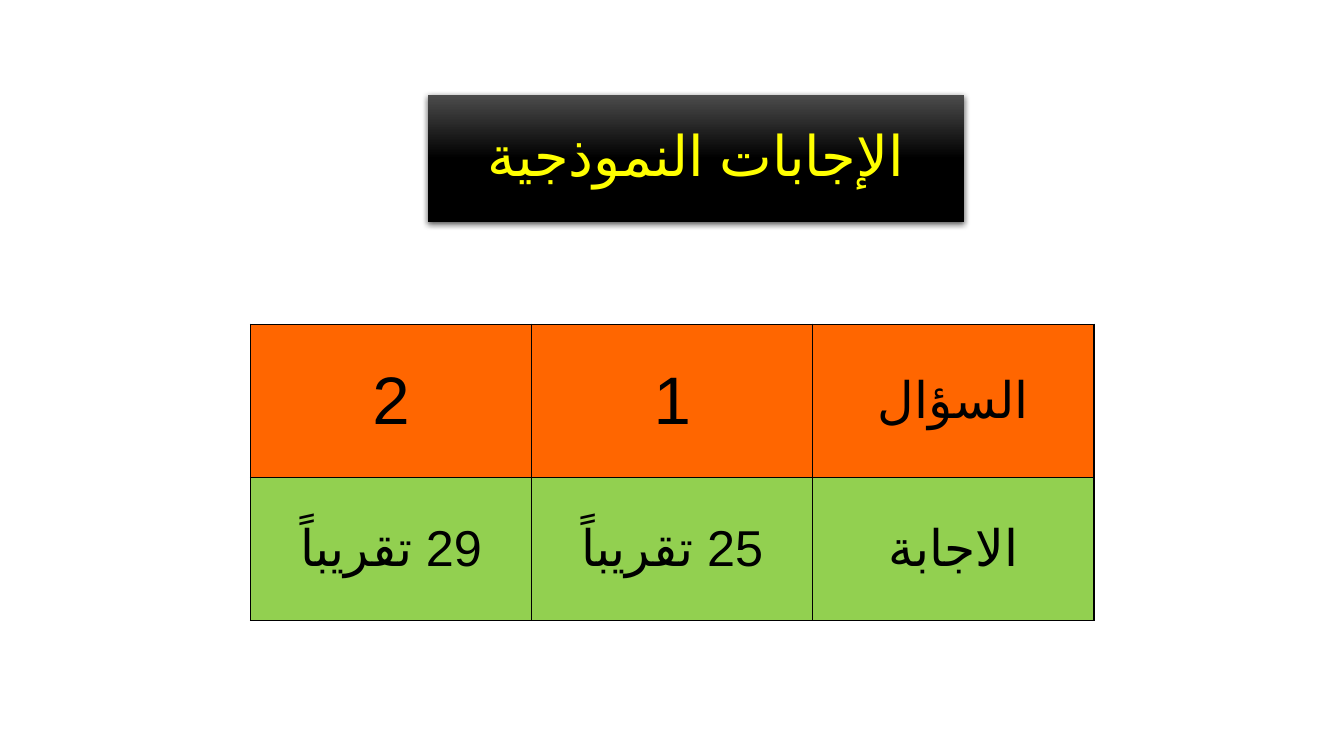
import dataclasses

import pptx
import pptx.dml.color
import pptx.enum.lang
import pptx.enum.text
import pptx.oxml
import pptx.oxml.ns
import pptx.util

Cm = pptx.util.Cm
Pt = pptx.util.Pt


@dataclasses.dataclass(frozen=True)
class Theme:
    """Colours, font and type sizes of the slide."""
    font: str = "Arial"
    title_text: str = "FFFF00"
    title_top: str = "4B4B4B"
    black: str = "000000"
    question: str = "FF6600"
    answer: str = "92D050"
    title_size: int = 40
    number_size: int = 48
    word_size: int = 36


THEME = Theme()
ROWS = [
    (THEME.question, 3.86, [("2", THEME.number_size), ("1", THEME.number_size), ("السؤال", THEME.word_size)]),
    (THEME.answer, 3.61, [(text, THEME.word_size) for text in ("29 تقريباً", "25 تقريباً", "الاجابة")]),
]


def rgb(value):
    """Turn a hex string into a colour."""
    return pptx.dml.color.RGBColor.from_string(value)


def drawing_xml(markup):
    """Parse a DrawingML element whose root lacks its namespace declaration."""
    tag, rest = markup.split(" ", 1)
    return pptx.oxml.parse_xml(f"{tag} {pptx.oxml.ns.nsdecls('a')} {rest}")


def write_arabic(text_frame, text, size, color):
    """Write one centred right-to-left paragraph."""
    paragraph = text_frame.paragraphs[0]
    paragraph.alignment = pptx.enum.text.PP_ALIGN.CENTER
    paragraph._p.get_or_add_pPr().set("rtl", "1")
    run = paragraph.add_run()
    run.text = text
    run_format = {
        "name": THEME.font,
        "size": Pt(size),
        "language_id": pptx.enum.lang.MSO_LANGUAGE_ID.ARABIC,
    }
    for name, value in run_format.items():
        setattr(run.font, name, value)
    run.font.color.rgb = rgb(color)
    run._r.get_or_add_rPr().append(drawing_xml(f'<a:cs typeface="{THEME.font}"/>'))
    return paragraph


def add_title(slide, left, top, width, height):
    """Place the title on its shaded black banner."""
    title = slide.shapes.title
    box = {"left": left, "top": top, "width": width, "height": height}
    for name, value in box.items():
        setattr(title, name, Cm(value))
    title.fill.gradient()
    title.fill.gradient_angle = 270
    stops = [(0, THEME.title_top), (0.5, THEME.black)]
    for stop, (position, color) in zip(title.fill.gradient_stops, stops):
        stop.position = position
        stop.color.rgb = rgb(color)
    title._element.spPr.append(drawing_xml(
        f'<a:effectLst ><a:outerShdw blurRad="{Pt(4.5)}" dist="{Pt(1.5)}" dir="5400000" rotWithShape="0">'
        f'<a:srgbClr val="{THEME.black}"><a:alpha val="63000"/></a:srgbClr></a:outerShdw></a:effectLst>'))
    frame_format = {
        "vertical_anchor": pptx.enum.text.MSO_ANCHOR.MIDDLE,
        "auto_size": pptx.enum.text.MSO_AUTO_SIZE.NONE,
        "word_wrap": True,
    }
    for name, value in frame_format.items():
        setattr(title.text_frame, name, value)
    paragraph = write_arabic(title.text_frame, "الإجابات النموذجية", THEME.title_size, THEME.title_text)
    paragraph.line_spacing = 0.9


def format_cell(cell, fill):
    """Give a cell thin black borders and a plain fill."""
    properties = cell._tc.get_or_add_tcPr()
    for side in ("lnL", "lnR", "lnT", "lnB"):
        properties.append(drawing_xml(
            f'<a:{side} w="{Pt(1)}"><a:solidFill><a:srgbClr val="{THEME.black}"/></a:solidFill></a:{side}>'))
    cell.fill.solid()
    cell.fill.fore_color.rgb = rgb(fill)
    cell.vertical_anchor = pptx.enum.text.MSO_ANCHOR.MIDDLE


def add_answer_table(slide, left, top, width):
    """Place the table of questions and answers with equal columns."""
    column_count = len(ROWS[0][2])
    height = sum(row_height for _, row_height, _ in ROWS)
    table = slide.shapes.add_table(
        len(ROWS), column_count, Cm(left), Cm(top), Cm(width), Cm(height)).table
    for name, value in {"first_row": False, "horz_banding": False}.items():
        setattr(table, name, value)
    for column in table.columns:
        column.width = Cm(width / column_count)
    for row, (fill, row_height, entries) in zip(table.rows, ROWS):
        row.height = Cm(row_height)
        for cell, (text, size) in zip(row.cells, entries):
            format_cell(cell, fill)
            write_arabic(cell.text_frame, text, size, THEME.black)


def main():
    """Build and save the model answers slide."""
    presentation = pptx.Presentation()
    presentation.slide_width = Cm(33.87)
    presentation.slide_height = Cm(19.05)
    slide = presentation.slides.add_slide(presentation.slide_layouts[5])
    add_title(slide, 10.78, 2.4, 13.52, 3.2)
    add_answer_table(slide, 6.31, 8.17, 21.26)
    presentation.save("out.pptx")


if __name__ == "__main__":
    main()
